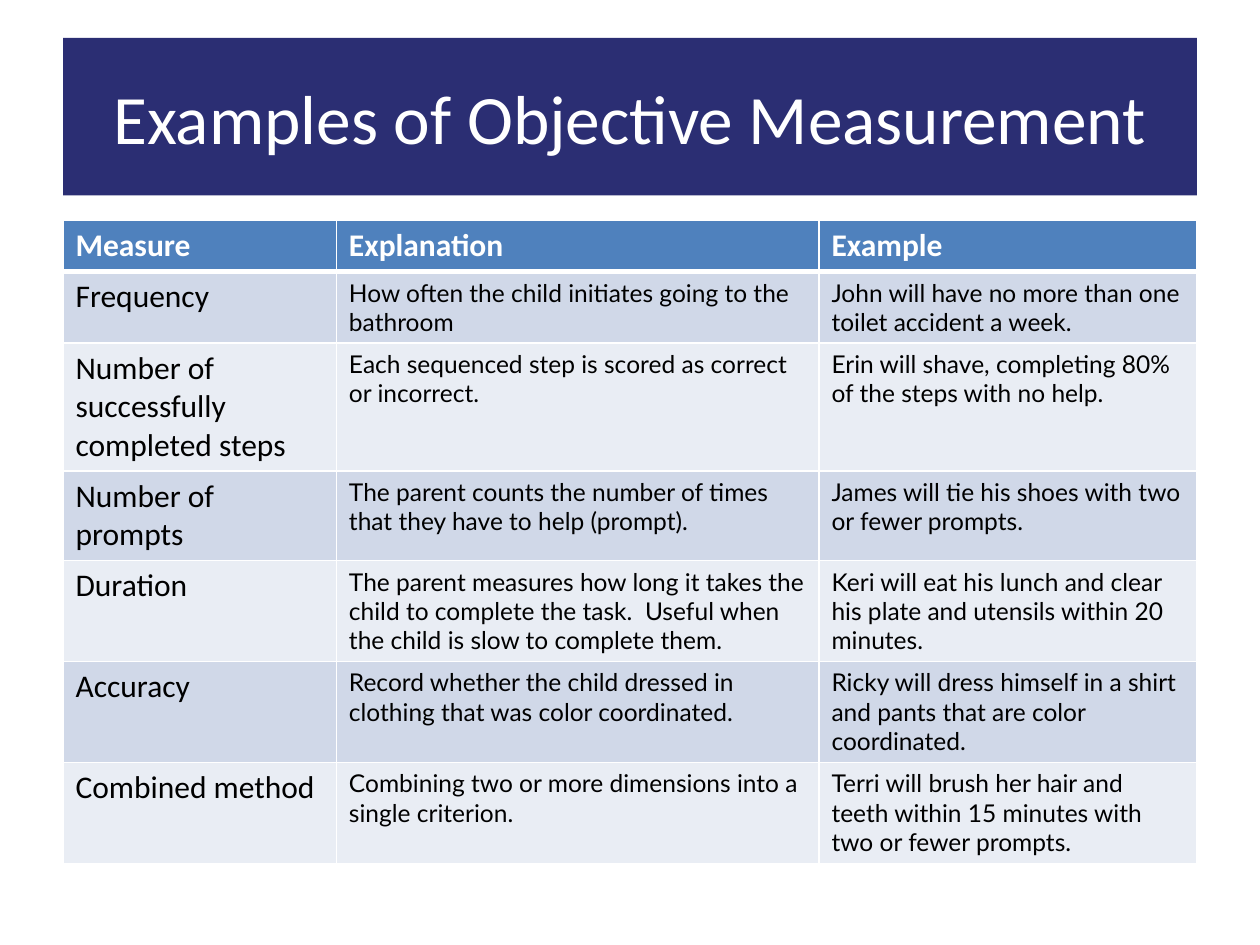
from lxml.etree import SubElement
from pptx import Presentation
from pptx.dml.color import RGBColor as RGB
from pptx.enum.text import MSO_ANCHOR as ANCHOR, MSO_AUTO_SIZE as AUTO, PP_ALIGN as ALIGN
from pptx.oxml.ns import qn
from pptx.util import Inches, Pt

COLORS = {"navy": "2B2E73", "blue": "4F81BD", "band": "D0D8E8", "pale": "E9EDF4",
          "white": "FFFFFF", "black": "000000"}
TITLE = {"name": "Calibri", "size": Pt(39.6), "bold": False}
HEADER = {"name": "Calibri", "size": Pt(18), "bold": True}
LABEL = {"name": "Calibri", "size": Pt(18), "bold": False}
BODY = {"name": "Lato", "size": Pt(14), "bold": False}
COLUMNS = [4.34, 7.66, 6]
ROWS = [
    ("Measure", "Explanation", "Example"),
    ("Frequency", "How often the child initiates going to the bathroom",
     "John will have no more than one toilet accident a week."),
    ("Number of successfully completed steps",
     "Each sequenced step is scored as correct or incorrect.",
     "Erin will shave, completing 80% of the steps with no help."),
    ("Number of prompts",
     "The parent counts the number of times that they have to help (prompt).",
     "James will tie his shoes with two or fewer prompts."),
    ("Duration",
     "The parent measures how long it takes the child to complete the task.  "
     "Useful when the child is slow to complete them.",
     "Keri will eat his lunch and clear his plate and utensils within 20 minutes."),
    ("Accuracy",
     "Record whether the child dressed in clothing that was color coordinated.",
     "Ricky will dress himself in a shirt and pants that are color coordinated."),
    ("Combined method", "Combining two or more dimensions into a single criterion.",
     "Terri will brush her hair and teeth within 15 minutes with two or fewer prompts."),
]


class Deck:
    """Holds the style and current slide on a grid of 20 columns by 30 rows."""

    def __init__(self):
        self.prs = Presentation()
        self.prs.slide_width, self.prs.slide_height = Inches(10), Inches(7.5)
        self.s = self.prs.slides.add_slide(self.prs.slide_layouts[5])

    def x(self, cols):
        return round(self.prs.slide_width * cols / 20)

    def y(self, rows):
        return round(self.prs.slide_height * rows / 30)

    def fill(self, item, color):
        item.fill.solid()
        item.fill.fore_color.rgb = RGB.from_string(COLORS[color])

    def text(self, tf, text, style, color):
        p = tf.paragraphs[0]
        r = p.add_run()
        r.text = text
        for key, value in style.items():
            setattr(r.font, key, value)
        r.font.color.rgb = RGB.from_string(COLORS[color])
        return p

    def title(self, text, col, row, cols, rows):
        sp = self.s.shapes.title
        sp.left, sp.top, sp.width, sp.height = self.x(col), self.y(row), self.x(cols), self.y(rows)
        self.fill(sp, "navy")
        tf = sp.text_frame
        for key, value in {"word_wrap": True, "auto_size": AUTO.NONE,
                           "vertical_anchor": ANCHOR.MIDDLE}.items():
            setattr(tf, key, value)
        self.text(tf, text, TITLE, "white").alignment = ALIGN.CENTER

    def borders(self, cell, top, bottom):
        tc_pr = cell._tc.get_or_add_tcPr()
        for side, width in {"L": 1, "R": 1, "T": top, "B": bottom}.items():
            ln = SubElement(tc_pr, qn(f"a:ln{side}"), w=str(Pt(width)))
            SubElement(SubElement(ln, qn("a:solidFill")), qn("a:srgbClr"), val=COLORS["white"])

    def table(self, data, widths, col, row, header_rows, body_rows):
        height = header_rows + body_rows * (len(data) - 1)
        table = self.s.shapes.add_table(len(data), len(widths), self.x(col), self.y(row),
                                        self.x(sum(widths)), self.y(height)).table
        for column, width in zip(table.columns, widths):
            column.width = self.x(width)
        for i, values in enumerate(data):
            table.rows[i].height = self.y(body_rows if i else header_rows)
            color = ("band" if i % 2 else "pale") if i else "blue"
            for j, value in enumerate(values):
                cell = table.cell(i, j)
                self.borders(cell, 3 if i == 1 else 1, 1 if i else 3)
                self.fill(cell, color)
                style = (BODY if j else LABEL) if i else HEADER
                self.text(cell.text_frame, value, style, "black" if i else "white")


def main():
    deck = Deck()
    deck.table(ROWS, COLUMNS, col=1, row=7, header_rows=1, body_rows=1.64)
    deck.title("Examples of Objective Measurement", col=1, row=1.2, cols=18, rows=5)
    deck.prs.save("out.pptx")


if __name__ == "__main__":
    main()
